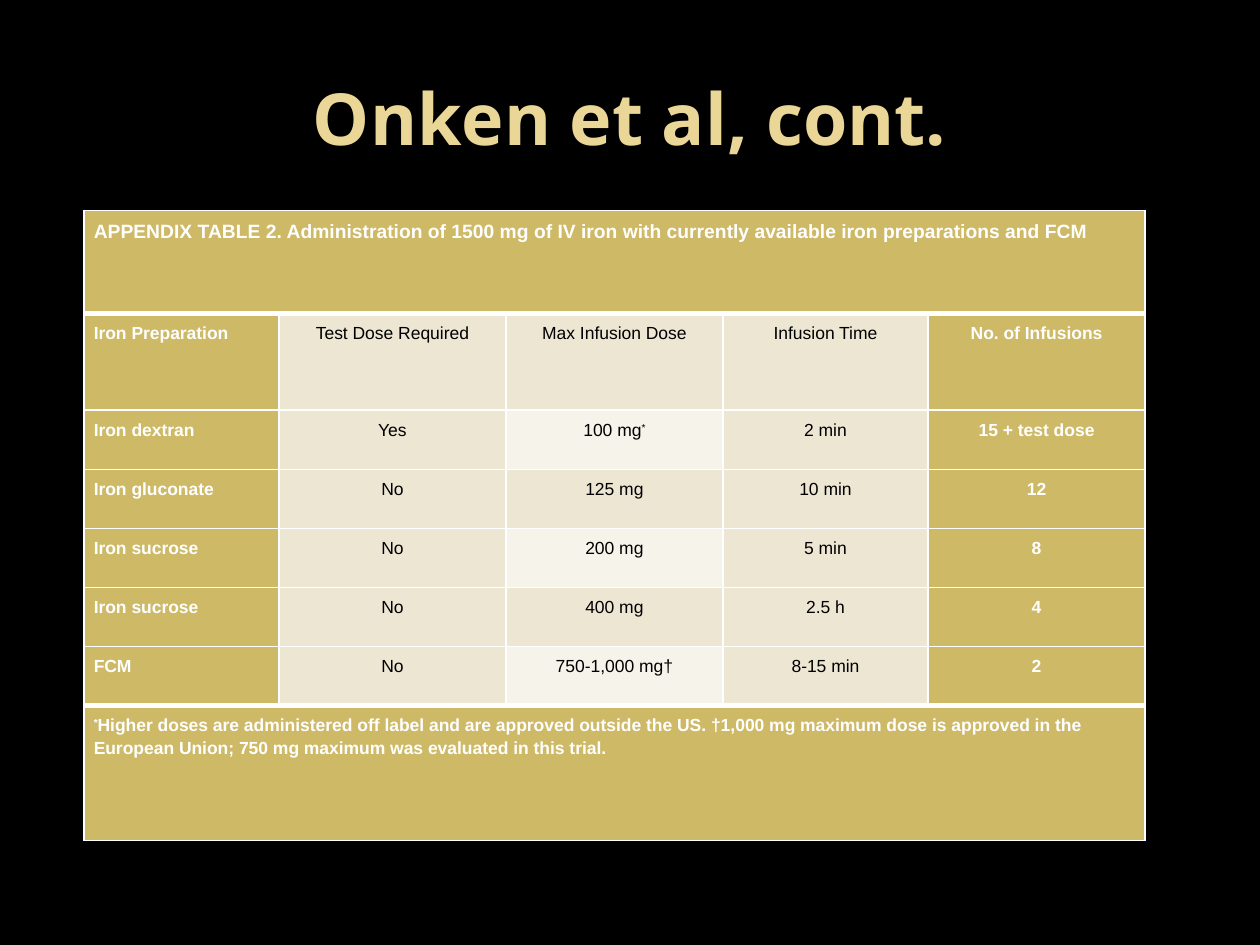
from lxml.etree import SubElement
from pptx import Presentation
from pptx.dml.color import RGBColor
from pptx.enum.text import MSO_ANCHOR, PP_ALIGN
from pptx.oxml.ns import qn
from pptx.util import Cm, Pt

COLORS = {
    "background": "000000",
    "title": "EAD696",
    "gold": "CEB966",
    "sand": "EDE6D3",
    "cream": "F6F3EA",
    "white": "FFFFFF",
    "black": "000000",
}
COLUMN_WIDTHS = [3.93, 4.58, 4.37, 4.14, 4.37]
ROW_HEIGHTS = [2.08, 1.95] + [1.19] * 5 + [2.72]
CAPTION = (
    "APPENDIX TABLE 2. Administration of 1500 mg of IV iron "
    "with currently available iron preparations and FCM"
)
FOOTNOTE = (
    "*Higher doses are administered off label and are approved outside the US. "
    "†1,000 mg maximum dose is approved in the European Union; "
    "750 mg maximum was evaluated in this trial."
)
PREPARATIONS = [
    ["Iron Preparation", "Test Dose Required", "Max Infusion Dose", "Infusion Time", "No. of Infusions"],
    ["Iron dextran", "Yes", "100 mg*", "2 min", "15 + test dose"],
    ["Iron gluconate", "No", "125 mg", "10 min", "12"],
    ["Iron sucrose", "No", "200 mg", "5 min", "8"],
    ["Iron sucrose", "No", "400 mg", "2.5 h", "4"],
    ["FCM", "No", "750-1,000 mg†", "8-15 min", "2"],
]


def rgb(name):
    return RGBColor.from_string(COLORS[name])


def add_run(paragraph, text, font_name, size, color, bold):
    run = paragraph.add_run()
    run.text = text
    run.font.name = font_name
    run.font.size = Pt(size)
    run.font.bold = bold
    run.font.color.rgb = rgb(color)
    return run


def add_title(slide, text):
    shape = slide.shapes.add_textbox(Cm(1.27), Cm(0.76), Cm(22.86), Cm(3.18))
    frame = shape.text_frame
    frame.word_wrap = True
    frame.vertical_anchor = MSO_ANCHOR.MIDDLE
    paragraph = frame.paragraphs[0]
    paragraph.alignment = PP_ALIGN.CENTER
    add_run(paragraph, text, "Noto Sans", 41, "title", True)


def set_borders(cell, top, bottom):
    """Draw white borders, 1 pt at the sides and as given above and below."""
    properties = cell._tc.get_or_add_tcPr()
    widths = {"a:lnL": 1, "a:lnR": 1, "a:lnT": top, "a:lnB": bottom}
    for index, (tag, width) in enumerate(widths.items()):
        line = SubElement(properties, qn(tag), w=str(Pt(width)))
        fill = SubElement(line, qn("a:solidFill"))
        SubElement(fill, qn("a:srgbClr"), val=COLORS["white"])
        properties.insert(index, line)


def fill_cell(cell, text, fill, alignment, size=10):
    """Write the cell on its fill, with each asterisk raised."""
    cell.fill.solid()
    cell.fill.fore_color.rgb = rgb(fill)
    cell.margin_left = cell.margin_right = Cm(0.2)
    cell.margin_top = cell.margin_bottom = Cm(0.15)
    paragraph = cell.text_frame.paragraphs[0]
    paragraph.alignment = alignment
    paragraph.line_spacing = 1.15
    on_gold = fill == "gold"
    for part in filter(None, text.partition("*")):
        run = add_run(paragraph, part, "Arial", size, "white" if on_gold else "black", on_gold)
        if part == "*":
            run._r.get_or_add_rPr().set("baseline", "30000")


def body_fill(row, column):
    if column in (0, len(COLUMN_WIDTHS) - 1):
        return "gold"
    return "cream" if column == 2 and row % 2 else "sand"


def add_iron_table(slide):
    row_count, column_count = len(ROW_HEIGHTS), len(COLUMN_WIDTHS)
    frame = slide.shapes.add_table(
        row_count, column_count, Cm(1.69), Cm(4.24),
        Cm(sum(COLUMN_WIDTHS)), Cm(sum(ROW_HEIGHTS)),
    )
    table = frame.table
    for column, width in zip(table.columns, COLUMN_WIDTHS):
        column.width = Cm(width)
    for row, height in zip(table.rows, ROW_HEIGHTS):
        row.height = Cm(height)

    last = row_count - 1
    for row in range(row_count):
        for column in range(column_count):
            set_borders(
                table.cell(row, column),
                top=3 if row in (1, last) else 1,
                bottom=3 if row in (0, last - 1) else 1,
            )
    for row, text, size in ((0, CAPTION, 11), (last, FOOTNOTE, 10)):
        table.cell(row, 0).merge(table.cell(row, column_count - 1))
        fill_cell(table.cell(row, 0), text, "gold", PP_ALIGN.LEFT, size)
    for row, texts in enumerate(PREPARATIONS):
        for column, text in enumerate(texts):
            alignment = PP_ALIGN.CENTER if column else PP_ALIGN.JUSTIFY
            fill_cell(table.cell(row + 1, column), text, body_fill(row, column), alignment)


def main():
    presentation = Presentation()
    presentation.slide_width = Cm(25.4)
    presentation.slide_height = Cm(19.05)
    slide = presentation.slides.add_slide(presentation.slide_layouts[6])
    slide.background.fill.solid()
    slide.background.fill.fore_color.rgb = rgb("background")
    add_title(slide, "Onken et al, cont.")
    add_iron_table(slide)
    presentation.save("out.pptx")


if __name__ == "__main__":
    main()
